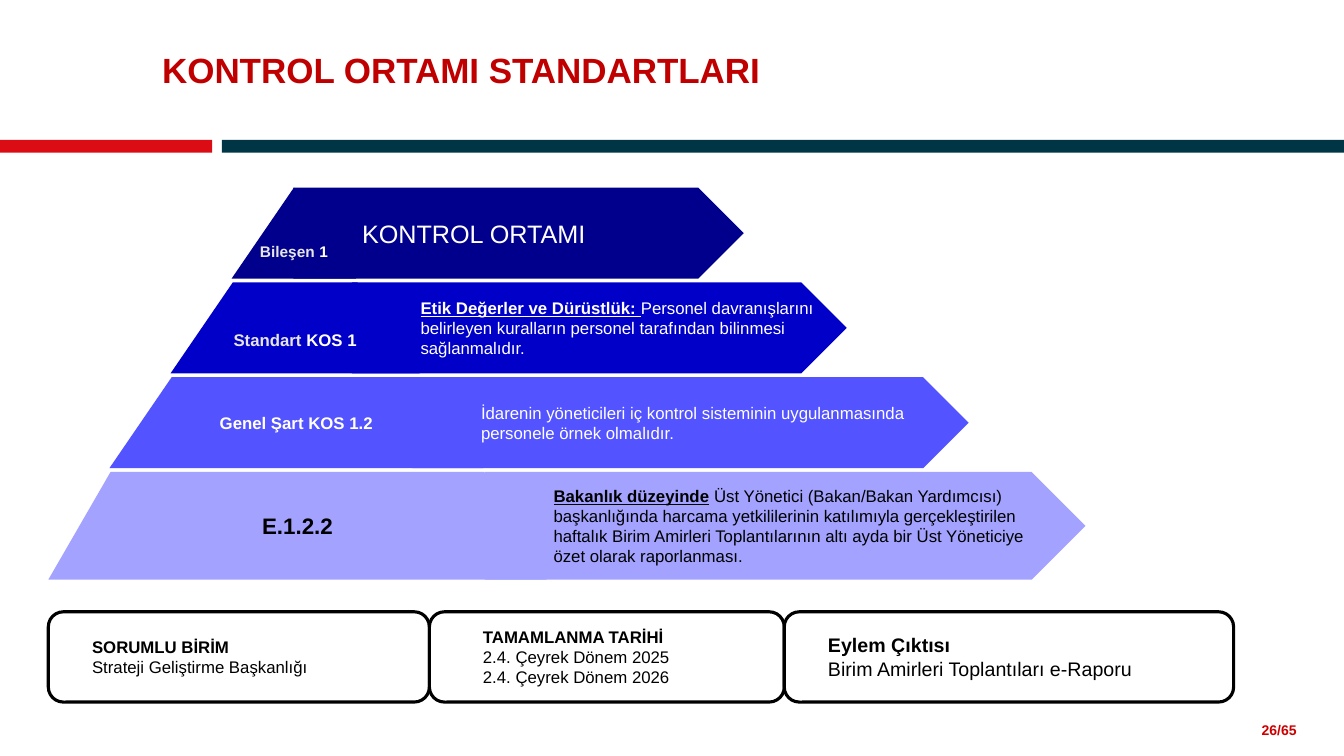
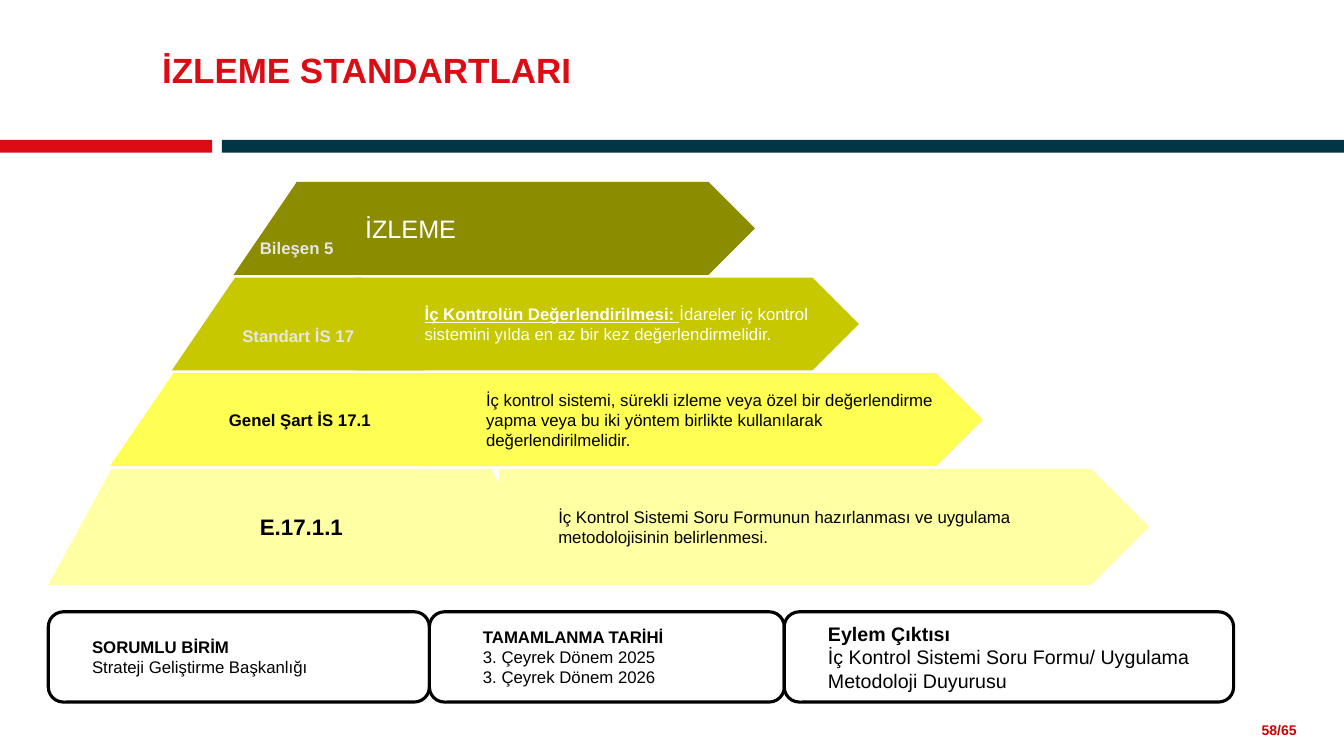
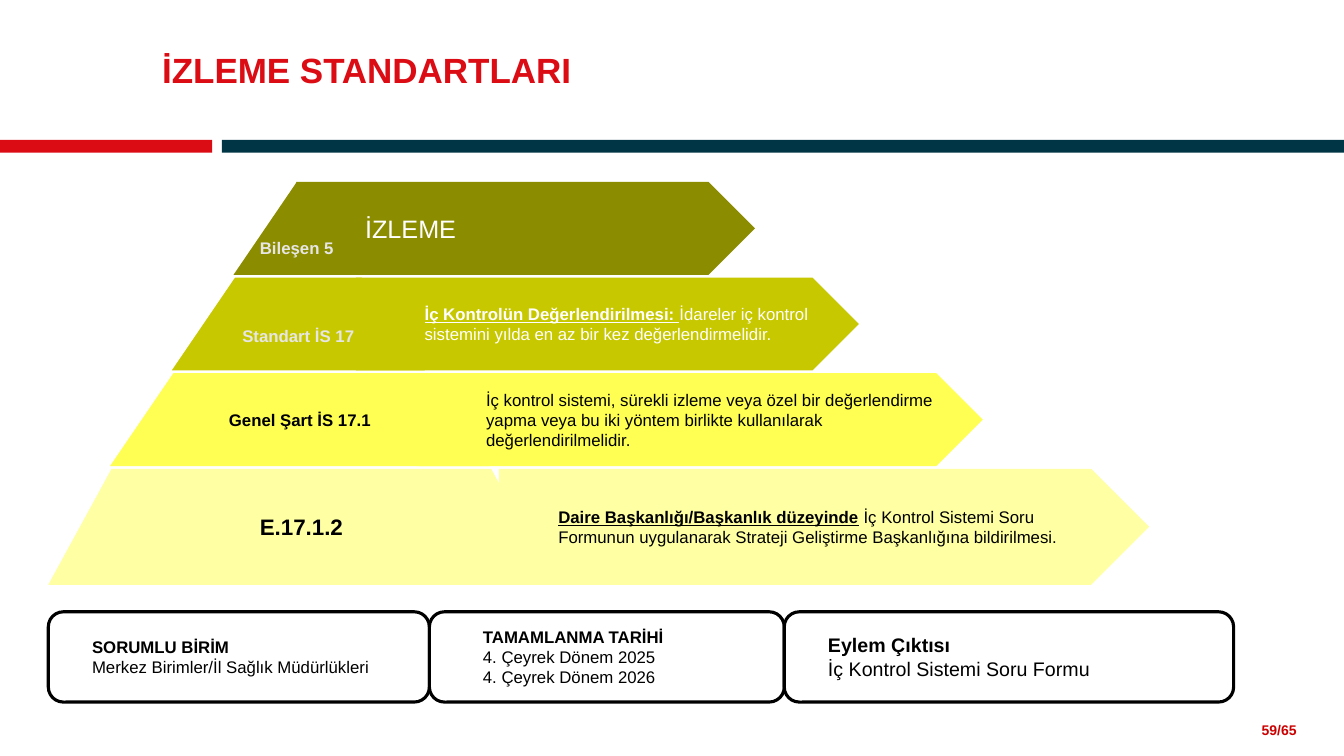
from dataclasses import dataclass

from pptx import Presentation
from pptx.dml.color import RGBColor
from pptx.enum.shapes import MSO_SHAPE as Shape
from pptx.enum.text import MSO_ANCHOR as Anchor, PP_ALIGN as Align
from pptx.util import Pt

COLORS = {
    "white": "FFFFFF", "black": "000000", "pale": "E7E6E6",
    "red": "DC0C15", "dark red": "C00000", "footer red": "CC0000", "petrol": "003546",
    "blue 1": "00008C", "blue 2": "0000C8", "blue 3": "5353FF", "blue 4": "A3A3FF",
    "olive 1": "8C8C00", "olive 2": "C8C800", "olive 3": "FFFF53", "olive 4": "FFFFA3",
}
FONT = "Arial"
SLIDE_WIDTH, SLIDE_HEIGHT = 960, 540
PAGE_COUNT = 65
BASE_LEFT = 34.5
CARD_TOP, CARD_HEIGHT = 437, 64.5


@dataclass
class Pyramid:
    """Measures of the four stepped levels; lists run from top to bottom."""
    hue: str
    top: float
    pitch: float
    heights: list
    left_step: float
    width_step: float
    arrow_lefts: list
    arrow_widths: list
    arrow_indents: list
    label_drops: list


BLUE = Pyramid("blue", 134, 67.7, [65, 65, 65, 77], 43.65, 89,
               [209.5, 251.3, 294.5, 346.3], [321.8, 353.5, 397.4, 429.1],
               [42, 42, 42, 42], [25.5, 17, 0, 0])
OLIVE = Pyramid("olive", 130, 68.3, [66.3, 66.3, 66.3, 82.8], 44.1, 90.4,
                [211.7, 254.2, 298.1, 356.4], [327.6, 359.3, 403.9, 464.4],
                [42, 42, 42, 35.3], [28, 17, 0, 0])


@dataclass
class Run:
    text: str
    size: float = 12
    color: str = "black"
    bold: bool = False
    underline: bool = False


def heading(text, color="black"):
    return Run(text, 12, color, True, True)


class Deck:
    def __init__(self):
        self.presentation = Presentation()
        self.presentation.slide_width = Pt(SLIDE_WIDTH)
        self.presentation.slide_height = Pt(SLIDE_HEIGHT)
        self.slide = None

    def add_slide(self, title, title_color, page):
        self.slide = self.presentation.slides.add_slide(self.presentation.slide_layouts[6])
        self.text_box(894.2, 512, 45, 19.5, Run(f"{page}/{PAGE_COUNT}", 10, "footer red", True))
        self.shape(Shape.RECTANGLE, 0, 100, 151.5, 9, "red")
        self.shape(Shape.RECTANGLE, 158.5, 100, SLIDE_WIDTH - 158.5, 9, "petrol")
        frame = self.text_box(108.7, 23, 840, 57.6, Run(title, 25, title_color, True))
        frame.vertical_anchor = Anchor.MIDDLE
        frame.paragraphs[0].line_spacing = 0.9

    def paint(self, shape, fill, line=None):
        shape.shadow.inherit = False
        shape.fill.solid()
        shape.fill.fore_color.rgb = RGBColor.from_string(COLORS[fill])
        if line:
            shape.line.color.rgb = RGBColor.from_string(COLORS[line])
            shape.line.width = Pt(2.25)
        else:
            shape.line.fill.background()
        return shape

    def shape(self, kind, left, top, width, height, fill, line=None):
        shape = self.slide.shapes.add_shape(kind, Pt(left), Pt(top), Pt(width), Pt(height))
        return self.paint(shape, fill, line)

    def text_box(self, left, top, width, height, *runs):
        box = self.slide.shapes.add_textbox(Pt(left), Pt(top), Pt(width), Pt(height))
        self.fill_text(box.text_frame, [runs], anchor=Anchor.TOP)
        return box.text_frame

    def fill_text(self, frame, lines, align=Align.LEFT, anchor=Anchor.MIDDLE, indent=0):
        """Fill a text frame with lines, each a list of runs."""
        frame.word_wrap = True
        frame.vertical_anchor = anchor
        for index, runs in enumerate(lines):
            paragraph = frame.add_paragraph() if index else frame.paragraphs[0]
            paragraph.alignment = align
            if indent:
                paragraph._p.get_or_add_pPr().set("marL", str(Pt(indent)))
            for item in runs:
                run = paragraph.add_run()
                run.text = item.text
                font = run.font
                font.name, font.size = FONT, Pt(item.size)
                font.bold, font.underline = item.bold, item.underline
                font.color.rgb = RGBColor.from_string(COLORS[item.color])

    def arrow(self, left, top, width, height, fill, runs, indent):
        arrow = self.shape(Shape.PENTAGON, left, top, width, height, fill)
        self.fill_text(arrow.text_frame, [runs], indent=indent)

    def trapezoid(self, left, top, width, height, slant, fill, runs, drop):
        """Draw a pyramid layer; drop is the extra margin above its label."""
        right, bottom = left + width, top + height
        builder = self.slide.shapes.build_freeform(Pt(left), Pt(bottom))
        corners = [(left + slant, top), (right - slant, top), (right, bottom)]
        builder.add_line_segments([(Pt(x), Pt(y)) for x, y in corners], close=True)
        layer = self.paint(builder.convert_to_shape(), fill)
        frame = layer.text_frame
        frame.margin_left = frame.margin_right = 0
        frame.margin_top, frame.margin_bottom = Pt(2 + drop), Pt(2)
        self.fill_text(frame, [runs], align=Align.CENTER)

    def pyramid(self, style, labels, texts):
        tops = [style.top + level * style.pitch for level in range(4)]
        fills = [f"{style.hue} {level + 1}" for level in range(4)]
        for level, runs in enumerate(texts):
            self.arrow(style.arrow_lefts[level], tops[level], style.arrow_widths[level],
                       style.heights[level], fills[level], runs, style.arrow_indents[level])
        for level, runs in enumerate(labels):
            self.trapezoid(BASE_LEFT + (3 - level) * style.left_step, tops[level],
                           (level + 1) * style.width_step, style.heights[level],
                           style.width_step / 2, fills[level], runs, style.label_drops[level])

    def card(self, left, width, indent, size, title, lines):
        card = self.shape(Shape.ROUNDED_RECTANGLE, left, CARD_TOP, width, CARD_HEIGHT,
                          "white", "black")
        paragraphs = [[Run(title, size, bold=True)]] + [[Run(line, size)] for line in lines]
        self.fill_text(card.text_frame, paragraphs, indent=indent)

    def cards(self, unit, quarter, output):
        self.card(BASE_LEFT, 272.2, 21, 12, "SORUMLU BİRİM", [unit])
        self.card(306.7, 253.5, 28, 12, "TAMAMLANMA TARİHİ",
                  [f"{quarter}. Çeyrek Dönem {year}" for year in (2025, 2026)])
        self.card(560.2, 321, 21, 14, "Eylem Çıktısı", [output])


def add_control_slide(deck):
    deck.add_slide("KONTROL ORTAMI STANDARTLARI", "dark red", 26)
    labels = [
        [Run("Bileşen ", 11, "pale", True), Run("1", 11, "white", True)],
        [Run("Standart ", 12, "pale", True), Run("KOS 1", 12, "white", True)],
        [Run("Genel Şart KOS 1.2", 12, "white", True)],
        [Run("E.1.2.2", 16, bold=True)],
    ]
    texts = [
        [Run("KONTROL ORTAMI", 18, "white")],
        [heading("Etik Değerler ve Dürüstlük: ", "white"),
         Run("Personel davranışlarını belirleyen kuralların personel tarafından "
             "bilinmesi sağlanmalıdır.", color="white")],
        [Run("İdarenin yöneticileri iç kontrol sisteminin uygulanmasında personele "
             "örnek olmalıdır.", color="white")],
        [heading("Bakanlık düzeyinde"),
         Run(" Üst Yönetici (Bakan/Bakan Yardımcısı) başkanlığında harcama yetkililerinin "
             "katılımıyla gerçekleştirilen haftalık Birim Amirleri Toplantılarının altı ayda "
             "bir Üst Yöneticiye özet olarak raporlanması.")],
    ]
    deck.pyramid(BLUE, labels, texts)
    deck.cards("Strateji Geliştirme Başkanlığı", "2.4", "Birim Amirleri Toplantıları e-Raporu")


def add_monitoring_slide(deck, page, action, action_runs, unit, quarter, output):
    deck.add_slide("İZLEME STANDARTLARI", "red", page)
    labels = [
        [Run("Bileşen 5", 12, "pale", True)],
        [Run("Standart İS 17", 12, "pale", True)],
        [Run("Genel Şart İS 17.1", bold=True)],
        [Run(action, 16, bold=True)],
    ]
    texts = [
        [Run("İZLEME", 18, "white")],
        [heading("İç Kontrolün Değerlendirilmesi: ", "white"),
         Run("İdareler iç kontrol sistemini yılda en az bir kez değerlendirmelidir.",
             color="white")],
        [Run("İç kontrol sistemi, sürekli izleme veya özel bir değerlendirme yapma veya "
             "bu iki yöntem birlikte kullanılarak değerlendirilmelidir.")],
        action_runs,
    ]
    deck.pyramid(OLIVE, labels, texts)
    deck.cards(unit, quarter, output)


def main():
    deck = Deck()
    add_control_slide(deck)
    add_monitoring_slide(
        deck, 58, "E.17.1.1",
        [Run("İç Kontrol Sistemi Soru Formunun hazırlanması ve uygulama metodolojisinin "
             "belirlenmesi.")],
        "Strateji Geliştirme Başkanlığı", "3",
        "İç Kontrol Sistemi Soru Formu/ Uygulama Metodoloji Duyurusu")
    add_monitoring_slide(
        deck, 59, "E.17.1.2",
        [heading("Daire Başkanlığı/Başkanlık düzeyinde"),
         Run(" İç Kontrol Sistemi Soru Formunun uygulanarak Strateji Geliştirme "
             "Başkanlığına bildirilmesi.")],
        "Merkez Birimler/İl Sağlık Müdürlükleri", "4", "İç Kontrol Sistemi Soru Formu")
    deck.presentation.save("out.pptx")


if __name__ == "__main__":
    main()
